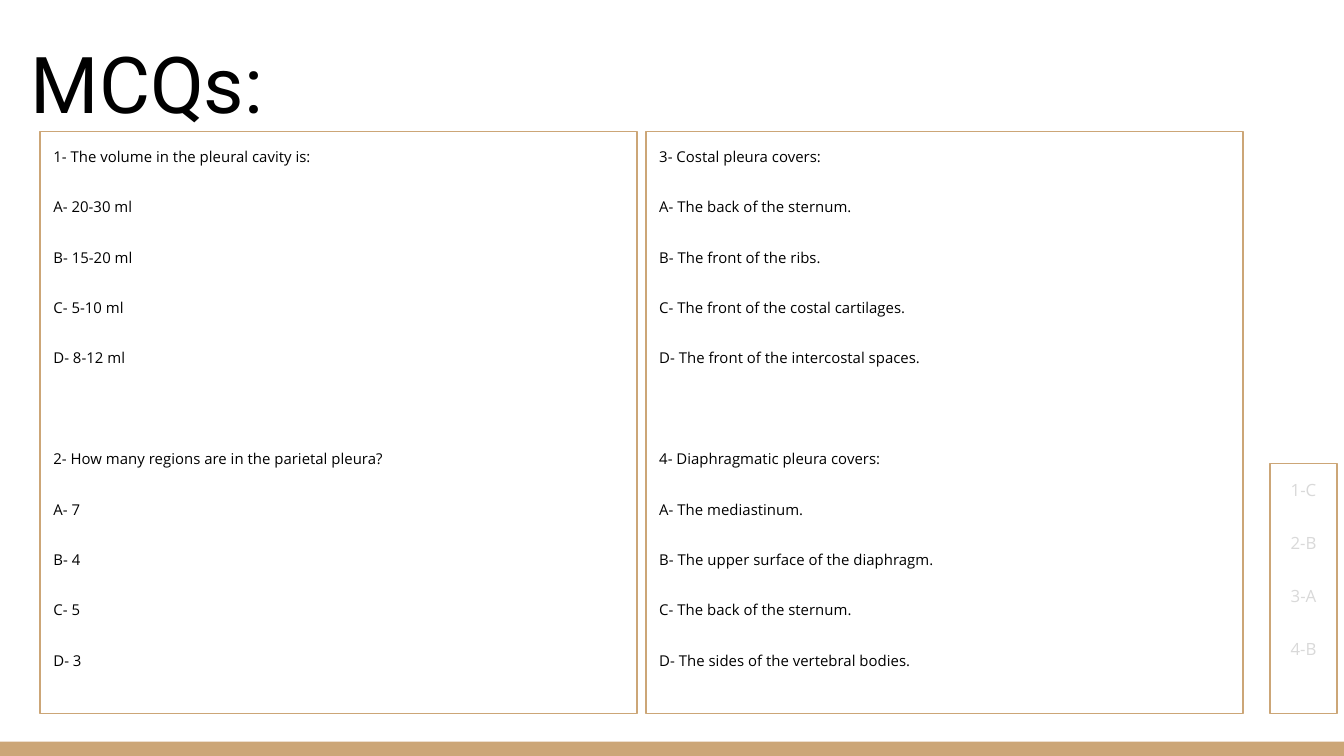
from dataclasses import dataclass
from typing import Any

from pptx import Presentation
from pptx import util as u
from pptx.dml.color import RGBColor
from pptx.enum import shapes, text

TAN = RGBColor(0xCC, 0xA6, 0x77)
BLACK = RGBColor(0x00, 0x00, 0x00)
PALE_GREY = RGBColor(0xD9, 0xD9, 0xD9)

PAGE_WIDTH, PAGE_HEIGHT = 25.4, 14.29
BAR_HEIGHT = 0.27
PANEL_BOTTOM = 13.49
LINE_GAP, QUESTION_GAP = 16, 43


@dataclass
class Question:
    prompt: str
    options: list[str]

    def lines(self) -> list[str]:
        return [self.prompt] + [
            f"{letter}- {option}" for letter, option in zip("ABCD", self.options)
        ]


@dataclass
class Panel:
    left: float
    top: float
    width: float
    groups: list[list[str]]
    size: int
    color: RGBColor
    alignment: Any


def apply_format(target: Any, values: dict[str, Any]) -> None:
    for name, value in values.items():
        setattr(target, name, value)


def format_frame(frame: Any, anchor: Any) -> None:
    inset = u.Cm(0.25)
    apply_format(frame, {
        "word_wrap": True,
        "auto_size": text.MSO_AUTO_SIZE.NONE,
        "vertical_anchor": anchor,
        "margin_left": inset,
        "margin_right": inset,
        "margin_top": inset,
        "margin_bottom": inset,
    })


def write_span(para: Any, words: str, font: str, size: int, color: RGBColor) -> None:
    span = para.add_run()
    span.text = words
    apply_format(span.font, {"name": font, "size": u.Pt(size), "bold": False})
    span.font.color.rgb = color


def add_box(page: Any, left: float, top: float, width: float, height: float) -> Any:
    box = page.shapes.add_shape(
        shapes.MSO_SHAPE.RECTANGLE, u.Cm(left), u.Cm(top), u.Cm(width), u.Cm(height)
    )
    box.shadow.inherit = False
    return box


def add_bar(page: Any) -> None:
    bar = add_box(page, 0, PAGE_HEIGHT - BAR_HEIGHT, PAGE_WIDTH, BAR_HEIGHT)
    bar.fill.solid()
    bar.fill.fore_color.rgb = TAN
    bar.line.fill.background()


def add_title(page: Any, words: str) -> None:
    title = page.shapes.title
    apply_format(title, {
        "left": u.Cm(0.33),
        "top": u.Cm(0.38),
        "width": u.Cm(13.11),
        "height": u.Cm(2.31),
    })
    format_frame(title.text_frame, text.MSO_ANCHOR.BOTTOM)
    para = title.text_frame.paragraphs[0]
    para.alignment = text.PP_ALIGN.LEFT
    write_span(para, words, "Roboto", 42, BLACK)


def add_panel(page: Any, panel: Panel) -> None:
    box = add_box(page, panel.left, panel.top, panel.width, PANEL_BOTTOM - panel.top)
    box.fill.background()
    box.line.color.rgb = TAN
    box.line.width = u.Pt(0.75)
    frame = box.text_frame
    format_frame(frame, text.MSO_ANCHOR.TOP)
    para = frame.paragraphs[0]
    for group_index, group in enumerate(panel.groups):
        for line_index, line in enumerate(group):
            gap = 0
            if group_index or line_index:
                para = frame.add_paragraph()
                gap = LINE_GAP if line_index else QUESTION_GAP
            apply_format(para, {
                "alignment": panel.alignment,
                "line_spacing": 1.15,
                "space_before": u.Pt(gap),
            })
            write_span(para, line, "Open Sans", panel.size, panel.color)
    para.space_after = u.Pt(LINE_GAP)


QUESTION_COLUMNS = [
    [
        Question("1- The volume in the pleural cavity is:",
                 ["20-30 ml", "15-20 ml", "5-10 ml", "8-12 ml"]),
        Question("2- How many regions are in the parietal pleura?",
                 ["7", "4", "5", "3"]),
    ],
    [
        Question("3- Costal pleura covers:",
                 ["The back of the sternum.",
                  "The front of the ribs.",
                  "The front of the costal cartilages.",
                  "The front of the intercostal spaces."]),
        Question("4- Diaphragmatic pleura covers:",
                 ["The mediastinum.",
                  "The upper surface of the diaphragm.",
                  "The back of the sternum.",
                  "The sides of the vertebral bodies."]),
    ],
]
ANSWERS = ["1-C", "2-B", "3-A", "4-B"]


def main() -> None:
    deck = Presentation()
    apply_format(deck, {
        "slide_width": u.Cm(PAGE_WIDTH),
        "slide_height": u.Cm(PAGE_HEIGHT),
    })
    page = deck.slides.add_slide(deck.slide_layouts.get_by_name("Title Only"))
    add_bar(page)
    add_title(page, "MCQs:")
    for column, questions in enumerate(QUESTION_COLUMNS):
        groups = [question.lines() for question in questions]
        add_panel(page, Panel(0.76 + 11.45 * column, 2.49, 11.28, groups,
                              8, BLACK, text.PP_ALIGN.LEFT))
    add_panel(page, Panel(24, 8.76, 1.27, [ANSWERS],
                          9, PALE_GREY, text.PP_ALIGN.CENTER))
    deck.save("out.pptx")


if __name__ == "__main__":
    main()
